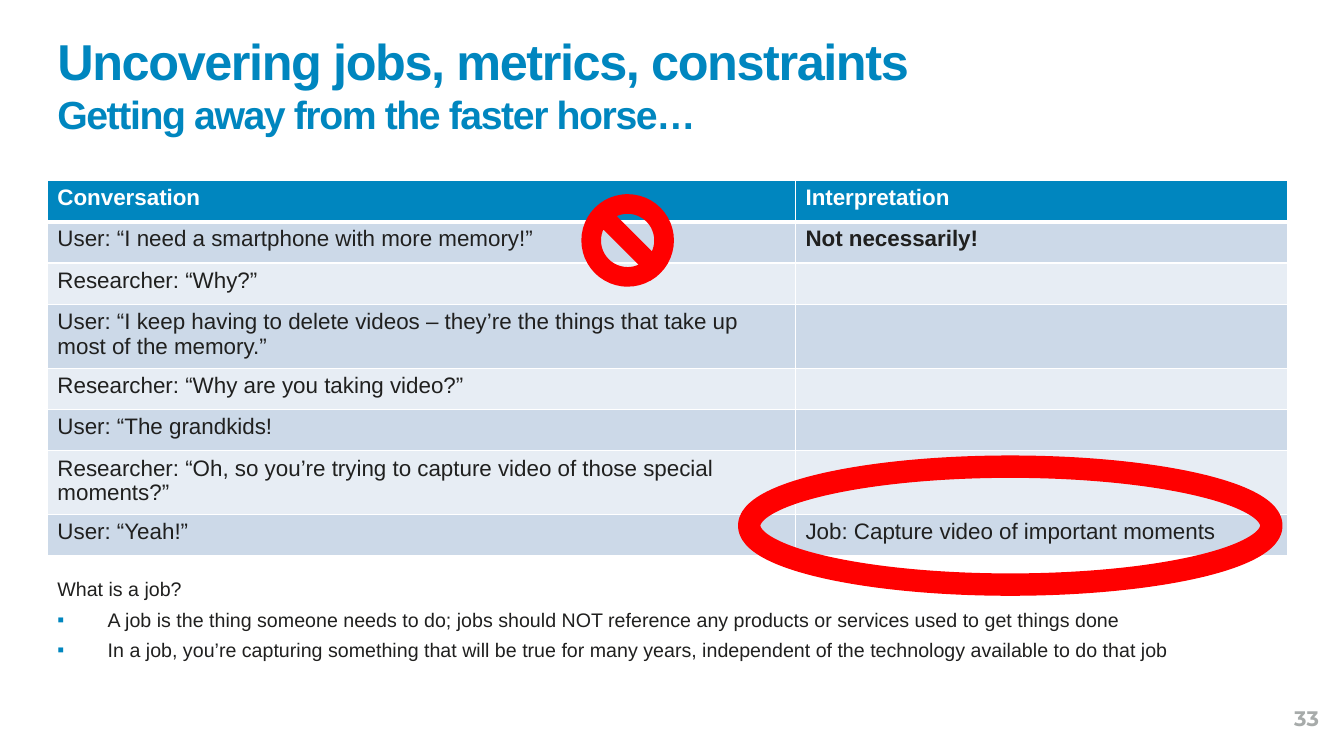
from dataclasses import dataclass

from lxml import etree
from pptx import Presentation
from pptx.dml.color import RGBColor
from pptx.enum.shapes import MSO_SHAPE
from pptx.enum.text import MSO_ANCHOR, PP_ALIGN
from pptx.oxml.ns import qn
from pptx.util import Inches, Pt

TOP, MIDDLE = MSO_ANCHOR.TOP, MSO_ANCHOR.MIDDLE
RIGHT = PP_ALIGN.RIGHT
NO_SYMBOL, OVAL = MSO_SHAPE.NO_SYMBOL, MSO_SHAPE.OVAL


@dataclass(frozen=True)
class Theme:
    blue: str = "0086BF"
    ink: str = "20201F"
    white: str = "FFFFFF"
    grey: str = "A7ABAA"
    red: str = "FF0000"
    bands: tuple[str, str] = ("CCD9E8", "E7EDF4")
    font: str = "Arial"
    number_font: str = "Montserrat"
    title_size: int = 36
    subtitle_size: int = 28
    table_size: int = 16
    body_size: int = 14
    number_size: int = 15


THEME = Theme()


@dataclass(frozen=True)
class Box:
    left: float
    top: float
    width: float
    height: float

    def emu(self) -> tuple[int, ...]:
        return tuple(Inches(v) for v in (self.left, self.top, self.width, self.height))


@dataclass(frozen=True)
class Exchange:
    conversation: str
    interpretation: str = ""
    bold_interpretation: bool = False


@dataclass(frozen=True)
class Mark:
    preset: int
    box: Box
    line_width: int
    filled: bool


TITLE_BOX = Box(0.47, 0.25, 11.82, 1.2)
NUMBER_BOX = Box(12.34, 6.92, 0.84, 0.4)
TABLE_BOX = Box(0.47, 1.79, 12.3, 3.28)
JOB_BOX = Box(0.47, 5.65, 11.82, 1.55)
COLUMN_WIDTHS = (7.42, 4.88)

EXCHANGES = (
    Exchange("User: “I need a smartphone with more memory!”", "Not necessarily!", True),
    Exchange("Researcher: “Why?”"),
    Exchange("User: “I keep having to delete videos – they’re the things that take up most of the memory.”"),
    Exchange("Researcher: “Why are you taking video?”"),
    Exchange("User: “The grandkids!"),
    Exchange("Researcher: “Oh, so you’re trying to capture video of those special moments?”"),
    Exchange("User: “Yeah!”", "Job: Capture video of important moments"),
)
JOB_QUESTION = "What is a job?"
JOB_POINTS = (
    "A job is the thing someone needs to do; jobs should NOT reference any products or services used to get things done",
    "In a job, you’re capturing something that will be true for many years, "
    "independent of the technology available to do that job",
)
MARKS = (
    Mark(NO_SYMBOL, Box(5.78, 1.94, 0.89, 0.89), 2, True),
    Mark(OVAL, Box(7.43, 4.63, 5.18, 1.17), 16, False),
)


def color(code: str) -> RGBColor:
    return RGBColor.from_string(code)


def add_run(paragraph, text: str, size: int, code: str, bold: bool = False, font: str = THEME.font):
    run = paragraph.add_run()
    run.text = text
    run.font.size = Pt(size)
    run.font.name = font
    run.font.bold = bold
    run.font.color.rgb = color(code)
    return run


def add_text_frame(slide, box: Box, anchor=TOP):
    frame = slide.shapes.add_textbox(*box.emu()).text_frame
    frame.word_wrap = True
    frame.vertical_anchor = anchor
    return frame


def add_title(slide) -> None:
    paragraph = add_text_frame(slide, TITLE_BOX).paragraphs[0]
    title = add_run(paragraph, "Uncovering jobs, metrics, constraints", THEME.title_size, THEME.blue, True)
    paragraph.add_line_break()
    subtitle = add_run(paragraph, "Getting away from the faster horse…", THEME.subtitle_size, THEME.blue, True)
    for run in (title, subtitle):
        run.font._element.set("spc", "-100")


def add_slide_number(slide) -> None:
    paragraph = add_text_frame(slide, NUMBER_BOX, MIDDLE).paragraphs[0]
    paragraph.alignment = RIGHT
    add_run(paragraph, "33", THEME.number_size, THEME.grey, True, THEME.number_font)


def set_borders(cell, top: int, bottom: int) -> None:
    """Draw white cell borders; the top and bottom widths are in points."""
    properties = cell._tc.get_or_add_tcPr()
    for side, width in (("L", 1), ("R", 1), ("T", top), ("B", bottom)):
        line = etree.SubElement(properties, qn(f"a:ln{side}"), w=str(Pt(width)))
        fill = etree.SubElement(line, qn("a:solidFill"))
        etree.SubElement(fill, qn("a:srgbClr"), val=THEME.white)


def fill_cell(cell, text: str, fill: str, ink: str, bold: bool) -> None:
    cell.fill.solid()
    cell.fill.fore_color.rgb = color(fill)
    if text:
        add_run(cell.text_frame.paragraphs[0], text, THEME.table_size, ink, bold)


def add_conversation_table(slide) -> None:
    row_count = len(EXCHANGES) + 1
    table = slide.shapes.add_table(row_count, len(COLUMN_WIDTHS), *TABLE_BOX.emu()).table
    for column, width in zip(table.columns, COLUMN_WIDTHS):
        column.width = Inches(width)
    for index in range(row_count):
        for cell in table.rows[index].cells:
            set_borders(cell, 3 if index == 1 else 1, 3 if index == 0 else 1)
    for cell, heading in zip(table.rows[0].cells, ("Conversation", "Interpretation")):
        fill_cell(cell, heading, THEME.blue, THEME.white, True)
    for index, exchange in enumerate(EXCHANGES):
        band = THEME.bands[index % 2]
        said, meant = table.rows[index + 1].cells
        fill_cell(said, exchange.conversation, band, THEME.ink, False)
        fill_cell(meant, exchange.interpretation, band, THEME.ink, exchange.bold_interpretation)


def add_bullet(paragraph) -> None:
    properties = paragraph._p.get_or_add_pPr()
    properties.set("marL", str(Inches(0.5)))
    properties.set("indent", str(-Inches(0.5)))
    bullet_color = etree.SubElement(properties, qn("a:buClr"))
    etree.SubElement(bullet_color, qn("a:srgbClr"), val=THEME.blue)
    etree.SubElement(properties, qn("a:buFont"), typeface=THEME.font)
    etree.SubElement(properties, qn("a:buChar"), char="▪")


def add_job_definition(slide) -> None:
    frame = add_text_frame(slide, JOB_BOX)
    for index, text in enumerate((JOB_QUESTION, *JOB_POINTS)):
        paragraph = frame.add_paragraph() if index else frame.paragraphs[0]
        paragraph.line_spacing = 1.1
        paragraph.space_before = Pt(3.5)
        if index:
            add_bullet(paragraph)
        add_run(paragraph, text, THEME.body_size, THEME.ink)


def add_mark(slide, mark: Mark) -> None:
    shape = slide.shapes.add_shape(mark.preset, *mark.box.emu())
    shape.shadow.inherit = False
    if mark.filled:
        shape.fill.solid()
        shape.fill.fore_color.rgb = color(THEME.red)
    else:
        shape.fill.background()
    shape.line.color.rgb = color(THEME.red)
    shape.line.width = Pt(mark.line_width)


def main() -> None:
    deck = Presentation()
    deck.slide_width, deck.slide_height = Inches(13.33), Inches(7.5)
    slide = deck.slides.add_slide(deck.slide_layouts[6])
    add_title(slide)
    add_slide_number(slide)
    add_conversation_table(slide)
    add_job_definition(slide)
    for mark in MARKS:
        add_mark(slide, mark)
    deck.save("out.pptx")


if __name__ == "__main__":
    main()
